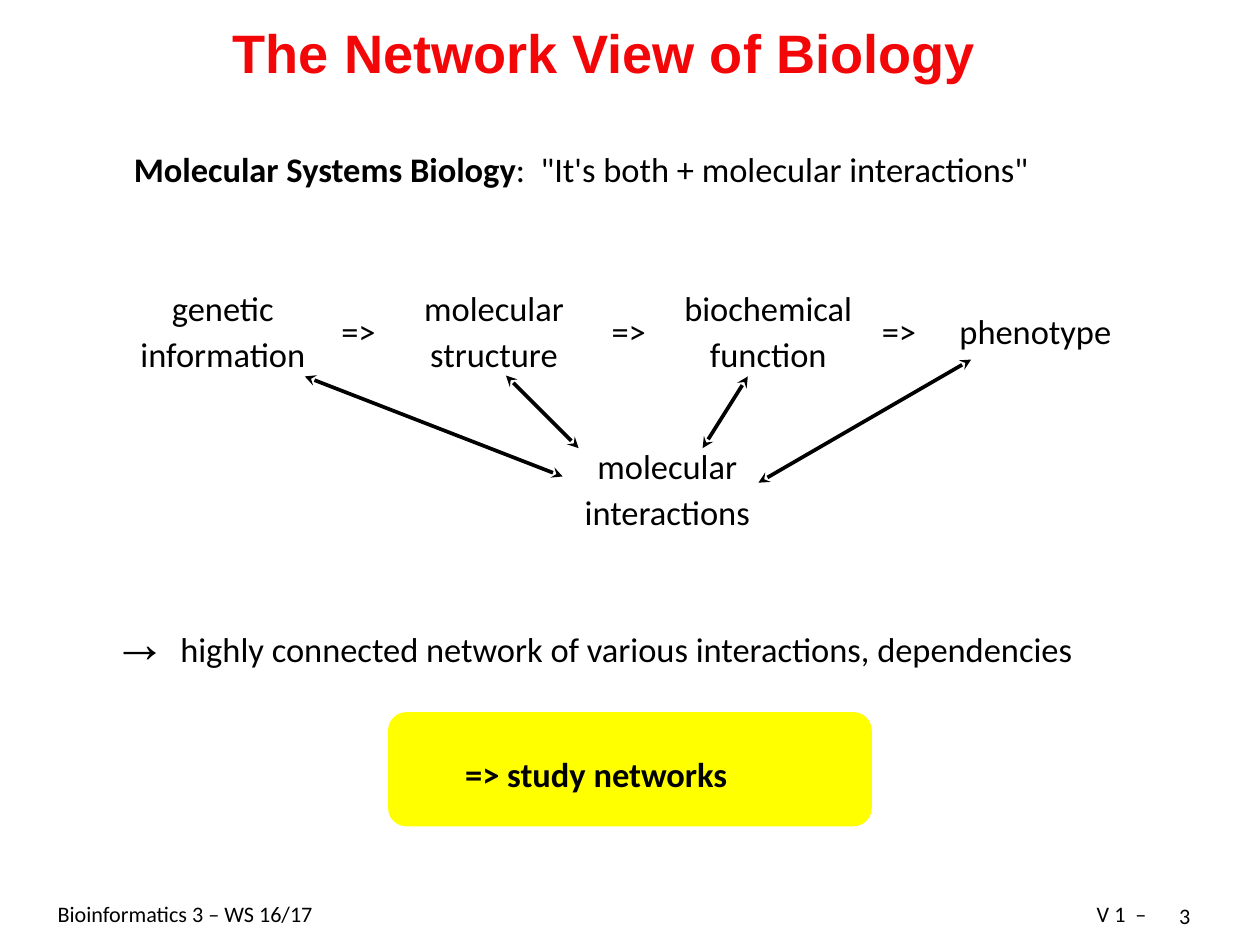
from lxml.etree import SubElement as Sub
from pptx import Presentation
from pptx.dml.color import RGBColor as Rgb
from pptx.enum.shapes import MSO_CONNECTOR as Con, MSO_SHAPE as Geo
from pptx.enum.text import MSO_ANCHOR as Anchor, PP_ALIGN as Align
from pptx.oxml.ns import qn
from pptx.util import Pt

PX = 9144  # EMU per px, 100 px to the inch
WIDE, HIGH = 1422, 1067
HUES = {"ink": "000000", "title": "F30608", "box": "FFFF00"}

# Formats
FLAT = {"margin_left": 0, "margin_right": 0, "margin_top": 0,
        "margin_bottom": 0, "word_wrap": True}
BODY = {"name": "Calibri", "size": Pt(28), "bold": False}
BOLD = {**BODY, "bold": True}
FOOT = {**BODY, "size": Pt(18)}
HEAD = {"name": "Arial", "size": Pt(44), "bold": True}
SIGN = {"name": "Times New Roman", "size": Pt(44), "bold": False}
LEFT = {"alignment": Align.LEFT, "line_spacing": 1.1}
MID = {**LEFT, "alignment": Align.CENTER}
RIGHT = {**LEFT, "alignment": Align.RIGHT}
ONE = {**MID, "line_spacing": 1.0}

# Content: left, top, width, height, paragraph format, runs
TITLE = (73, 9, 1218, 99, ONE, [("The Network View of Biology", HEAD)])
LINES = [
    (151, 163, 1111, 46, LEFT, [
        ("Molecular Systems Biology", BOLD),
        (":  \"It's both + molecular interactions\"", BODY)]),
    (127, 680, 1185, 81, LEFT, [
        ("→ ", SIGN),
        ("highly connected network of various interactions, dependencies",
         BODY)]),
    (525, 846, 371, 46, LEFT, [("=> study networks", BOLD)]),
    (65, 1014, 544, 29, LEFT, [("Bioinformatics 3 – WS 16/17", FOOT)]),
    (1164, 1014, 130, 29, RIGHT, [("V 1  –", FOOT)]),
    (1324, 1019, 26, 29, ONE, [("3", FOOT)]),
]
# Terms: text, left, top, width, height
TERMS = [
    ("genetic information", 151, 320, 201, 94),
    ("molecular structure", 457, 320, 201, 94),
    ("biochemical function", 747, 320, 240, 94),
    ("phenotype", 1068, 345, 201, 44),
    ("molecular interactions", 642, 498, 222, 94),
]
STEP = {"text": "=>", "left": 372, "top": 345, "gap": 305, "count": 3}
LINKS = [(571, 424, 653, 506), (344, 425, 635, 538),
         (844, 425, 793, 506), (1096, 406, 856, 545)]
PANEL = (438, 804, 546, 129)

deck = Presentation()
deck.slide_width, deck.slide_height = WIDE * PX, HIGH * PX
slide = deck.slides.add_slide(deck.slide_layouts[6])
shapes = slide.shapes


def emu(*px):
    return [n * PX for n in px]


def style(item, look):
    for key, val in look.items():
        setattr(item, key, val)


def write(left, top, wide, high, form, runs, hue="ink"):
    frame = shapes.add_textbox(*emu(left, top, wide, high)).text_frame
    style(frame, FLAT)
    para = frame.paragraphs[0]
    style(para, form)
    for text, font in runs:
        run = para.add_run()
        run.text = text
        style(run.font, font)
        run.font.color.rgb = Rgb.from_string(HUES[hue])
    return frame


def link(*ends):
    line = shapes.add_connector(Con.STRAIGHT, *emu(*ends))
    line.line.width = Pt(3)
    line.line.color.rgb = Rgb.from_string(HUES["ink"])
    for tag in ("a:headEnd", "a:tailEnd"):
        Sub(line.line._get_or_add_ln(), qn(tag), type="stealth")
    Sub(line._element.spPr, qn("a:effectLst"))


# Yellow panel
panel = shapes.add_shape(Geo.ROUNDED_RECTANGLE, *emu(*PANEL))
panel.adjustments[0] = 0.16
panel.shadow.inherit = False
panel.fill.solid()
panel.fill.fore_color.rgb = Rgb.from_string(HUES["box"])
panel.line.fill.background()

# Title, text lines and footer
write(*TITLE, hue="title").vertical_anchor = Anchor.MIDDLE
for row in LINES:
    write(*row)

# Chain of terms with the steps between them
for text, *area in TERMS:
    write(*area, MID, [(text, BODY)])
for i in range(STEP["count"]):
    write(STEP["left"] + i * STEP["gap"], STEP["top"], 65, 44, MID,
          [(STEP["text"], BODY)])

# Two-way arrows to the interactions
for ends in LINKS:
    link(*ends)

deck.save("out.pptx")
